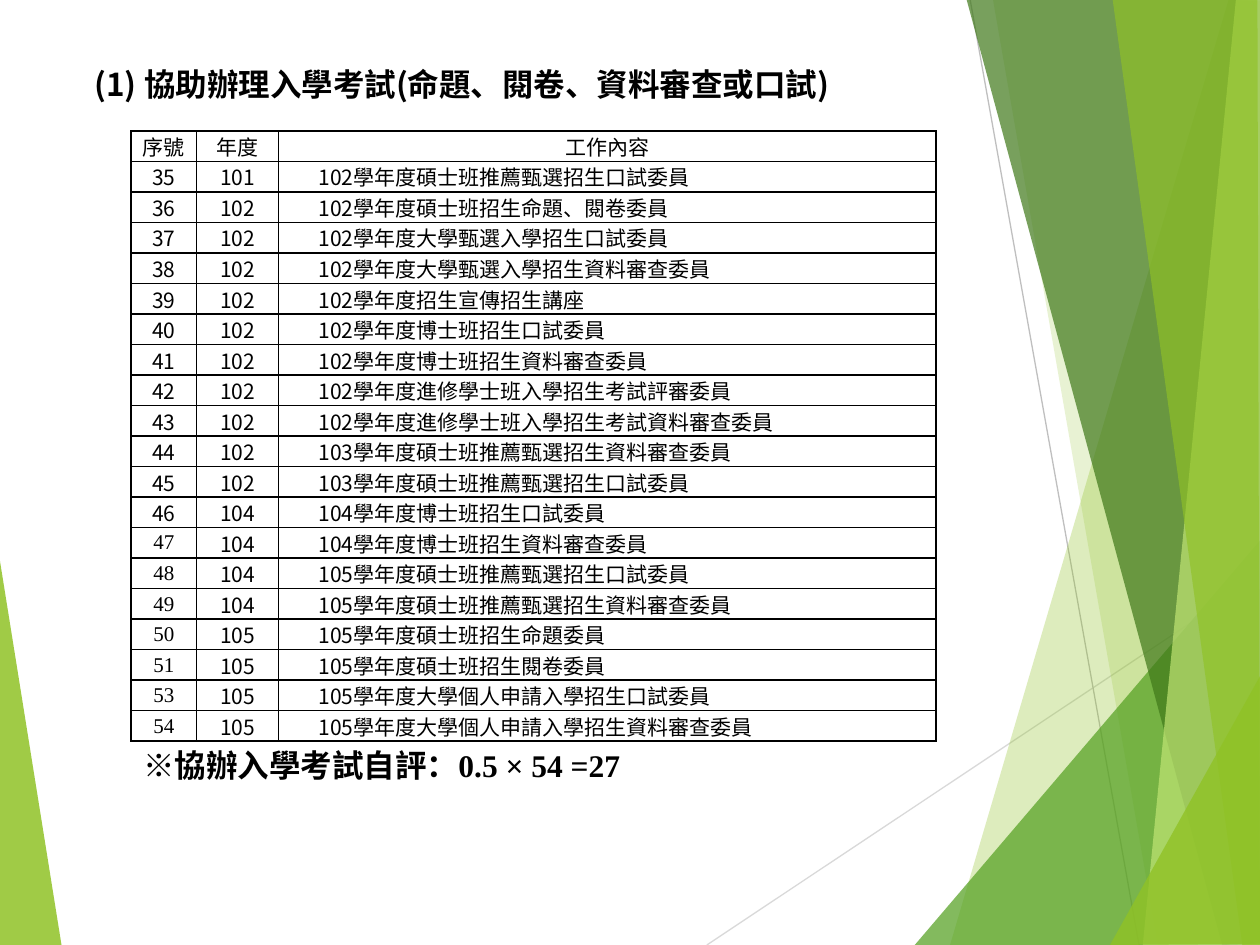
"""Build a slide listing entrance-exam duties beside a faceted green border."""
import dataclasses
import typing

import lxml.etree
import pptx
import pptx.dml.color
import pptx.enum.shapes
import pptx.enum.text
import pptx.oxml.ns
import pptx.util

COLUMNS, ROWS = 1000, 750
UNIT = pptx.util.Inches(10) // COLUMNS
ALIGN = pptx.enum.text.PP_ALIGN
MIDDLE = pptx.enum.text.MSO_ANCHOR.MIDDLE


@dataclasses.dataclass(frozen=True)
class Theme:
    ink: str = "000000"
    lime: str = "90C226"
    green: str = "54A021"
    forest: str = "3F7819"
    pale: str = "C0E474"
    light_rule: str = "D9D9D9"
    rule: str = "BFBFBF"
    sans: str = "Noto Sans CJK SC"
    chinese: str = "Noto Sans CJK TC"
    serif: str = "Times New Roman"
    heading: int = 18
    body: int = 12
    border: float = 1
    hairline: float = 0.75


THEME = Theme()


class Facet(typing.NamedTuple):
    color: str
    opacity: int
    corners: list[tuple[int, int]]


class Ray(typing.NamedTuple):
    color: str
    start: tuple[int, int]
    end: tuple[int, int]


class Duty(typing.NamedTuple):
    number: int
    year: int
    term: int
    task: str


LEFT_FACET = Facet(THEME.lime, 85, [(-1, 439), (49, 751), (-1, 750)])
RAYS = [
    Ray(THEME.light_rule, (561, 750), (1001, 457)),
    Ray(THEME.rule, (770, 0), (904, 750)),
]
RIGHT_FACETS = [
    Facet(THEME.lime, 30, [(975, 0), (754, 750), (1002, 751), (1001, 1)]),
    Facet(THEME.lime, 20, [(788, -1), (919, 750), (1001, 750), (1001, -1)]),
    Facet(THEME.green, 72, [(726, 750), (1000, 429), (1001, 750)]),
    Facet(THEME.forest, 70, [(767, -1), (970, 750), (1001, 749), (1001, -1)]),
    Facet(THEME.pale, 70, [(981, -1), (907, 750), (1001, 750), (1000, -1)]),
    Facet(THEME.lime, 65, [(883, -1), (986, 750), (1000, 750), (998, -1)]),
    Facet(THEME.lime, 80, [(881, 750), (1001, 535), (1001, 749)]),
]
HEADERS = ["序號", "年度", "工作內容"]
COLUMN_WIDTHS = [52, 65, 522]
ROW_HEIGHT = 23
FIRST_SERIF_NUMBER = 47
DUTIES = [
    Duty(35, 101, 102, "碩士班推薦甄選招生口試委員"),
    Duty(36, 102, 102, "碩士班招生命題、閱卷委員"),
    Duty(37, 102, 102, "大學甄選入學招生口試委員"),
    Duty(38, 102, 102, "大學甄選入學招生資料審查委員"),
    Duty(39, 102, 102, "招生宣傳招生講座"),
    Duty(40, 102, 102, "博士班招生口試委員"),
    Duty(41, 102, 102, "博士班招生資料審查委員"),
    Duty(42, 102, 102, "進修學士班入學招生考試評審委員"),
    Duty(43, 102, 102, "進修學士班入學招生考試資料審查委員"),
    Duty(44, 102, 103, "碩士班推薦甄選招生資料審查委員"),
    Duty(45, 102, 103, "碩士班推薦甄選招生口試委員"),
    Duty(46, 104, 104, "博士班招生口試委員"),
    Duty(47, 104, 104, "博士班招生資料審查委員"),
    Duty(48, 104, 105, "碩士班推薦甄選招生口試委員"),
    Duty(49, 104, 105, "碩士班推薦甄選招生資料審查委員"),
    Duty(50, 105, 105, "碩士班招生命題委員"),
    Duty(51, 105, 105, "碩士班招生閱卷委員"),
    Duty(53, 105, 105, "大學個人申請入學招生口試委員"),
    Duty(54, 105, 105, "大學個人申請入學招生資料審查委員"),
]


def rgb(color: str) -> pptx.dml.color.RGBColor:
    return pptx.dml.color.RGBColor.from_string(color)


def add_node(parent, tag: str, **attributes: str):
    node = lxml.etree.SubElement(parent, pptx.oxml.ns.qn(tag))
    for key, value in attributes.items():
        node.set(key, value)
    return node


def write(paragraph, text: str, *, font: str, size: int = THEME.body,
          bold: bool = False, align=ALIGN.LEFT, indent: int = 0) -> None:
    run = paragraph.add_run()
    run.text = text
    run.font.name = font
    run.font.size = pptx.util.Pt(size)
    run.font.bold = bold
    run.font.color.rgb = rgb(THEME.ink)
    add_node(run.font._element, "a:ea", typeface=THEME.chinese)
    paragraph.alignment = align
    if indent:
        properties = paragraph._p.get_or_add_pPr()
        properties.set("marL", "0")
        properties.set("indent", str(indent * UNIT))


def draw_facet(slide, facet: Facet) -> None:
    start, *others = facet.corners
    builder = slide.shapes.build_freeform(*start, scale=UNIT)
    builder.add_line_segments(others, close=True)
    shape = builder.convert_to_shape()
    shape.shadow.inherit = False
    shape.line.fill.background()
    shape.fill.solid()
    shape.fill.fore_color.rgb = rgb(facet.color)
    tint = shape._element.spPr.find(".//" + pptx.oxml.ns.qn("a:srgbClr"))
    add_node(tint, "a:alpha", val=str(facet.opacity * 1000))


def draw_ray(slide, ray: Ray) -> None:
    ends = [value * UNIT for value in ray.start + ray.end]
    line = slide.shapes.add_connector(pptx.enum.shapes.MSO_CONNECTOR.STRAIGHT, *ends)
    line.line.color.rgb = rgb(ray.color)
    line.line.width = pptx.util.Pt(THEME.hairline)
    add_node(line._element.spPr, "a:effectLst")


def format_cell(cell) -> None:
    cell.vertical_anchor = MIDDLE
    cell.margin_left = cell.margin_right = 7 * UNIT
    cell.margin_top = cell.margin_bottom = 0
    properties = cell._tc.get_or_add_tcPr()
    for side in ("a:lnL", "a:lnR", "a:lnT", "a:lnB"):
        edge = add_node(properties, side, w=str(pptx.util.Pt(THEME.border)))
        add_node(add_node(edge, "a:solidFill"), "a:srgbClr", val=THEME.ink)
    cell.fill.background()


def draw_duties(slide, left: int, top: int) -> None:
    count = len(DUTIES) + 1
    table = slide.shapes.add_table(
        count, len(HEADERS), left * UNIT, top * UNIT,
        sum(COLUMN_WIDTHS) * UNIT, count * ROW_HEIGHT * UNIT).table
    table.first_row = table.horz_banding = False
    for column, width in zip(table.columns, COLUMN_WIDTHS):
        column.width = width * UNIT
    for row in table.rows:
        row.height = ROW_HEIGHT * UNIT
    for cell in table.iter_cells():
        format_cell(cell)
    for column, header in enumerate(HEADERS):
        write(table.cell(0, column).text_frame.paragraphs[0], header,
              font=THEME.serif, align=ALIGN.CENTER)
    for row, duty in enumerate(DUTIES, 1):
        number, year, task = (table.cell(row, column).text_frame.paragraphs[0]
                              for column in range(len(HEADERS)))
        number_font = THEME.serif if duty.number >= FIRST_SERIF_NUMBER else THEME.sans
        write(number, str(duty.number), font=number_font, align=ALIGN.CENTER)
        write(year, str(duty.year), font=THEME.sans, align=ALIGN.CENTER)
        write(task, str(duty.term), font=THEME.sans, indent=25)
        write(task, "學年度" + duty.task, font=THEME.chinese, indent=25)


def main() -> None:
    deck = pptx.Presentation()
    deck.slide_width, deck.slide_height = COLUMNS * UNIT, ROWS * UNIT
    slide = deck.slides.add_slide(deck.slide_layouts[5])
    draw_facet(slide, LEFT_FACET)
    for ray in RAYS:
        draw_ray(slide, ray)
    for facet in RIGHT_FACETS:
        draw_facet(slide, facet)
    draw_duties(slide, 104, 104)
    title = slide.shapes.title
    title.left, title.top, title.width, title.height = (
        value * UNIT for value in (65, 49, 610, 40))
    score = slide.shapes.add_textbox(*(value * UNIT for value in (104, 587, 530, 71)))
    for box, text, font in (
            (title, "(1) 協助辦理入學考試(命題、閱卷、資料審查或口試)", THEME.sans),
            (score, "※協辦入學考試自評：0.5 × 54 =27", THEME.serif)):
        box.text_frame.word_wrap = True
        box.text_frame.auto_size = pptx.enum.text.MSO_AUTO_SIZE.NONE
        write(box.text_frame.paragraphs[0], text, font=font, size=THEME.heading, bold=True)
    title.text_frame.vertical_anchor = MIDDLE
    title.text_frame.paragraphs[0].line_spacing = 0.85
    deck.save("out.pptx")


if __name__ == "__main__":
    main()
